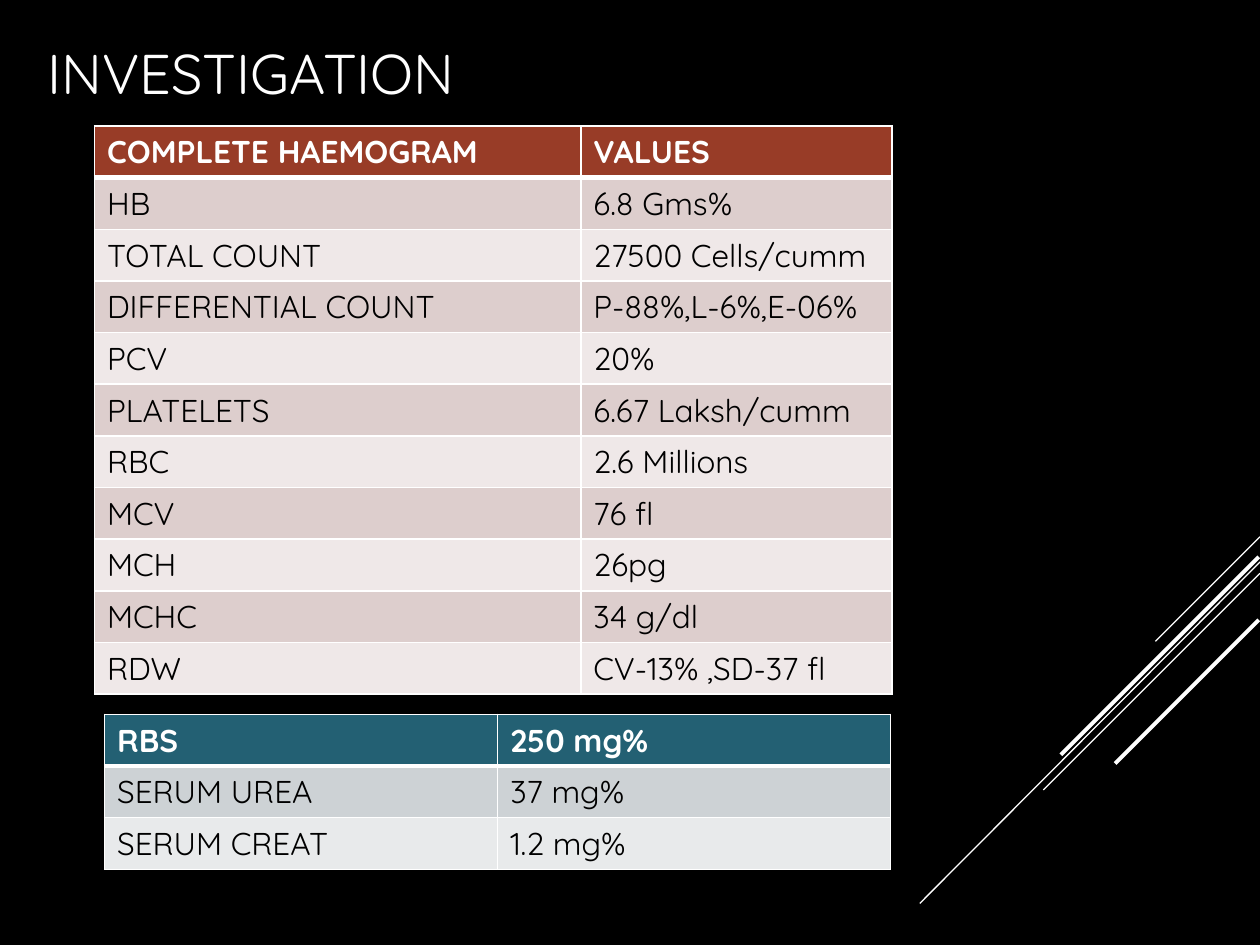
from dataclasses import dataclass

from lxml import etree
from pptx import Presentation
from pptx.dml.color import RGBColor
from pptx.enum.shapes import MSO_CONNECTOR
from pptx.enum.text import MSO_ANCHOR
from pptx.oxml.ns import qn
from pptx.util import Inches, Pt

STRAIGHT = MSO_CONNECTOR.STRAIGHT
MIDDLE = MSO_ANCHOR.MIDDLE
BLANK_LAYOUT = 6


@dataclass(frozen=True)
class Theme:
    font: str = "Quicksand"
    black: str = "000000"
    white: str = "FFFFFF"
    red: tuple = ("983C27", "DDCECD", "EFE8E8")   # header, odd and even rows
    teal: tuple = ("236073", "CDD2D5", "E8EAEB")
    title_size: int = 32
    body_size: int = 18
    border: float = 1
    header_rule: float = 3


THEME = Theme()

HAEMOGRAM = [
    ("COMPLETE HAEMOGRAM", "VALUES"),
    ("HB", "6.8 Gms%"),
    ("TOTAL COUNT", "27500 Cells/cumm"),
    ("DIFFERENTIAL COUNT", "P-88%,L-6%,E-06%"),
    ("PCV", "20%"),
    ("PLATELETS", "6.67 Laksh/cumm"),
    ("RBC", "2.6 Millions"),
    ("MCV", "76 fl"),
    ("MCH", "26pg"),
    ("MCHC", "34 g/dl"),
    ("RDW", "CV-13% ,SD-37 fl"),
]
BIOCHEMISTRY = [
    ("RBS", "250 mg%"),
    ("SERUM UREA", "37 mg%"),
    ("SERUM CREAT", "1.2 mg%"),
]

# Diagonals: right end x, y, then horizontal and vertical run, then width
DIAGONALS = [
    (10, 4.26, 0.83, 0.83, 0.75),
    (10, 4.46, 2.7, 2.71, 0.75),
    (10, 4.55, 1.72, 1.72, 0.75),
    (9.99, 4.42, 1.57, 1.57, 2.25),
    (9.99, 4.92, 1.14, 1.14, 2.25),
]


def rgb(color):
    return RGBColor.from_string(color)


def write(tf, text, size, color, bold=False):
    r = tf.paragraphs[0].add_run()
    r.text = text
    font_format = {"name": THEME.font, "size": Pt(size), "bold": bold}
    for name, value in font_format.items():
        setattr(r.font, name, value)
    r.font.color.rgb = rgb(color)


def set_borders(cell, widths):
    """Put border lines, in left, right, top, bottom order, before the fill."""
    tc_pr = cell._tc.get_or_add_tcPr()
    for i, (side, width) in enumerate(widths.items()):
        ln = etree.Element(qn(f"a:ln{side}"), w=str(Pt(width)))
        fill = etree.SubElement(ln, qn("a:solidFill"))
        etree.SubElement(fill, qn("a:srgbClr"), val=THEME.white)
        tc_pr.insert(i, ln)


def add_diagonals(slide):
    for x, y, dx, dy, width in DIAGONALS:
        line = slide.shapes.add_connector(
            STRAIGHT, Inches(x), Inches(y), Inches(x - dx), Inches(y + dy))
        line.line.color.rgb = rgb(THEME.white)
        line.line.width = Pt(width)
        etree.SubElement(line._element.spPr, qn("a:effectLst"))


def add_title(slide, text, x, y, w, h):
    sp = slide.shapes.add_textbox(Inches(x), Inches(y), Inches(w), Inches(h))
    tf = sp.text_frame
    tf.word_wrap = True
    tf.vertical_anchor = MIDDLE
    write(tf, text, THEME.title_size, THEME.white)


def add_results(slide, rows, x, y, col_widths, row_height, colors):
    header, odd, even = colors
    table = slide.shapes.add_table(
        len(rows), len(col_widths), Inches(x), Inches(y),
        Inches(sum(col_widths)), Inches(row_height * len(rows))).table
    for col, width in zip(table.columns, col_widths):
        col.width = Inches(width)
    for i, values in enumerate(rows):
        table.rows[i].height = Inches(row_height)
        is_header = i == 0
        fill = header if is_header else odd if i % 2 else even
        widths = dict.fromkeys("LRTB", THEME.border)
        if i < 2:
            widths["B" if is_header else "T"] = THEME.header_rule
        for j, text in enumerate(values):
            cell = table.cell(i, j)
            cell.fill.solid()
            cell.fill.fore_color.rgb = rgb(fill)
            set_borders(cell, widths)
            write(cell.text_frame, text, THEME.body_size,
                  THEME.white if is_header else THEME.black, is_header)


def main():
    prs = Presentation()
    prs.slide_width, prs.slide_height = Inches(10), Inches(7.5)
    slide = prs.slides.add_slide(prs.slide_layouts[BLANK_LAYOUT])
    slide.background.fill.solid()
    slide.background.fill.fore_color.rgb = rgb(THEME.black)

    # Decoration
    add_diagonals(slide)
    # Title
    add_title(slide, "INVESTIGATION", 0.28, 0.21, 3.78, 0.72)
    # Blood count, then biochemistry
    add_results(slide, HAEMOGRAM, 0.75, 1, (3.86, 2.47), 0.41, THEME.red)
    add_results(slide, BIOCHEMISTRY, 0.83, 5.67, (3.12, 3.12), 0.41, THEME.teal)

    prs.save("out.pptx")


if __name__ == "__main__":
    main()
